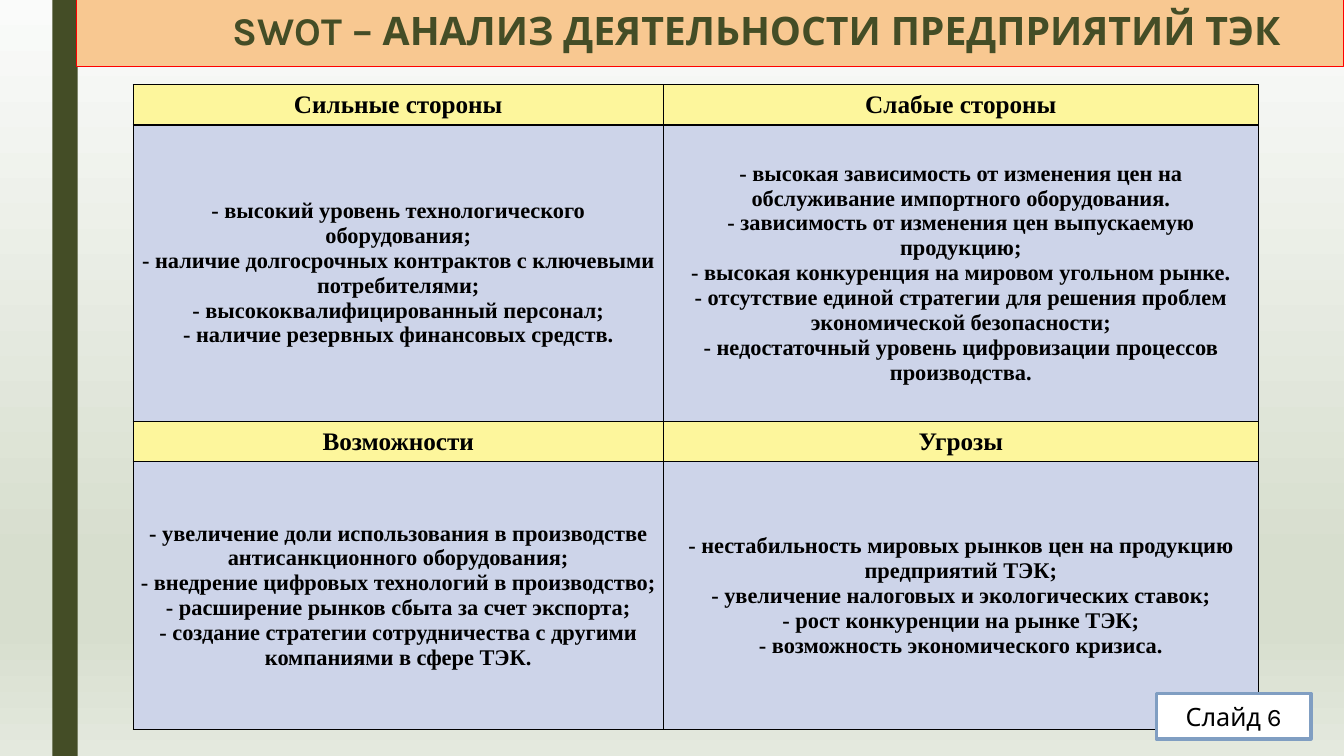
import pptx
import pptx.util
import pptx.dml.color
import pptx.enum.shapes
import pptx.enum.text
import pptx.oxml
import pptx.oxml.ns
from lxml import etree

Inches = pptx.util.Inches
Pt = pptx.util.Pt
qn = pptx.oxml.ns.qn
Color = pptx.dml.color.RGBColor.from_string

THEME = {
    "olive": "444D26", "peach": "F8C891", "red": "FF0000",
    "yellow": "FDF69C", "lavender": "CDD4E9", "black": "000000",
    "white": "FFFFFF", "blue": "809EC2",
    "background": [(0, "FAFBFA"), (74, "D7DECE"), (83, "D7DECE"), (100, "E4E9DE")],
    "heading_font": "Karla", "table_font": "Times New Roman",
    "title_size": 28, "header_size": 18, "body_size": 16, "label_size": 18,
}

SWOT_ROWS = [
    (0.4, [["Сильные стороны"], ["Слабые стороны"]]),
    (2.94, [
        ["- высокий уровень технологического оборудования;",
         "- наличие долгосрочных контрактов с ключевыми потребителями;",
         "- высококвалифицированный персонал;",
         "- наличие резервных финансовых средств."],
        ["- высокая зависимость от изменения цен на обслуживание импортного оборудования.",
         "- зависимость от изменения цен выпускаемую продукцию;",
         "- высокая конкуренция на мировом угольном рынке.",
         "- отсутствие единой стратегии для решения проблем экономической безопасности;",
         "- недостаточный уровень цифровизации процессов производства."],
    ]),
    (0.4, [["Возможности"], ["Угрозы"]]),
    (2.66, [
        ["- увеличение доли использования в производстве антисанкционного оборудования;",
         "- внедрение цифровых технологий в производство;",
         "- расширение рынков сбыта за счет экспорта;",
         "- создание стратегии сотрудничества с другими компаниями в сфере ТЭК."],
        ["- нестабильность мировых рынков цен на продукцию предприятий ТЭК;",
         "- увеличение налоговых и экологических ставок;",
         "- рост конкуренции на рынке ТЭК;",
         "- возможность экономического кризиса."],
    ]),
]


def add_box(slide, left, top, width, height, fill, line=None, line_width=0):
    shape = slide.shapes.add_shape(
        pptx.enum.shapes.MSO_SHAPE.RECTANGLE,
        Inches(left), Inches(top), Inches(width), Inches(height))
    shape.shadow.inherit = False
    shape.fill.solid()
    shape.fill.fore_color.rgb = Color(THEME[fill])
    if line:
        shape.line.color.rgb = Color(THEME[line])
        shape.line.width = Pt(line_width)
    else:
        shape.line.fill.background()
    return shape


def write_lines(text_frame, lines, font, size, color, bold):
    text_frame.word_wrap = True
    for index, line in enumerate(lines):
        paragraph = text_frame.add_paragraph() if index else text_frame.paragraphs[0]
        paragraph.alignment = pptx.enum.text.PP_ALIGN.CENTER
        run = paragraph.add_run()
        run.text = line
        run.font.name = THEME[font]
        run.font.size = Pt(THEME[size])
        run.font.color.rgb = Color(THEME[color])
        run.font.bold = bold


presentation = pptx.Presentation()
presentation.slide_width = Inches(13.33)
presentation.slide_height = Inches(7.5)
slide = presentation.slides.add_slide(presentation.slide_layouts[6])

slide.background.fill.gradient()
background = slide.element.find(".//" + qn("a:gradFill"))
stops = background.find(qn("a:gsLst"))
for stop in list(stops):
    stops.remove(stop)
for position, color in THEME["background"]:
    stop = etree.SubElement(stops, qn("a:gs"), pos=str(position * 1000))
    etree.SubElement(stop, qn("a:srgbClr"), val=color)
direction = background.find(qn("a:lin"))
direction.set("ang", "5400000")
direction.set("scaled", "0")

add_box(slide, 0.52, 0, 0.25, 7.5, "olive")

table_frame = slide.shapes.add_table(
    len(SWOT_ROWS), 2, Inches(1.32), Inches(0.84), Inches(11.16), Inches(6.4))
table = table_frame.table
table.first_row = False
table.horz_banding = False
for column, width in zip(table.columns, (5.26, 5.9)):
    column.width = Inches(width)

for row_index, (height, cell_texts) in enumerate(SWOT_ROWS):
    table.rows[row_index].height = Inches(height)
    is_header = row_index % 2 == 0
    for column_index, lines in enumerate(cell_texts):
        cell = table.cell(row_index, column_index)
        cell.margin_left = cell.margin_right = Inches(0.04)
        cell.margin_top = cell.margin_bottom = Inches(0.04)
        cell.vertical_anchor = pptx.enum.text.MSO_ANCHOR.MIDDLE
        cell.fill.solid()
        cell.fill.fore_color.rgb = Color(THEME["yellow" if is_header else "lavender"])
        write_lines(cell.text_frame, lines, "table_font",
                    "header_size" if is_header else "body_size", "black", True)
        properties = cell._tc.get_or_add_tcPr()
        for order, side in enumerate(("a:lnL", "a:lnR", "a:lnT", "a:lnB")):
            border = etree.Element(qn(side), w=str(Pt(1)))
            border_fill = etree.SubElement(border, qn("a:solidFill"))
            etree.SubElement(border_fill, qn("a:srgbClr"), val=THEME["black"])
            properties.insert(order, border)

title = add_box(slide, 0.76, 0, 12.57, 0.66, "peach", "red", 0.75)
title.text_frame.margin_left = Inches(1.02)
title.text_frame.vertical_anchor = pptx.enum.text.MSO_ANCHOR.MIDDLE
write_lines(title.text_frame, ["SWOT – АНАЛИЗ ДЕЯТЕЛЬНОСТИ ПРЕДПРИЯТИЙ ТЭК"],
            "heading_font", "title_size", "olive", True)
title.text_frame.paragraphs[0].line_spacing = 0.89

label = add_box(slide, 11.47, 6.88, 1.53, 0.45, "white", "blue", 2.75)
label.text_frame.vertical_anchor = pptx.enum.text.MSO_ANCHOR.MIDDLE
write_lines(label.text_frame, ["Слайд 6"], "heading_font", "label_size", "black", False)

presentation.save("out.pptx")
